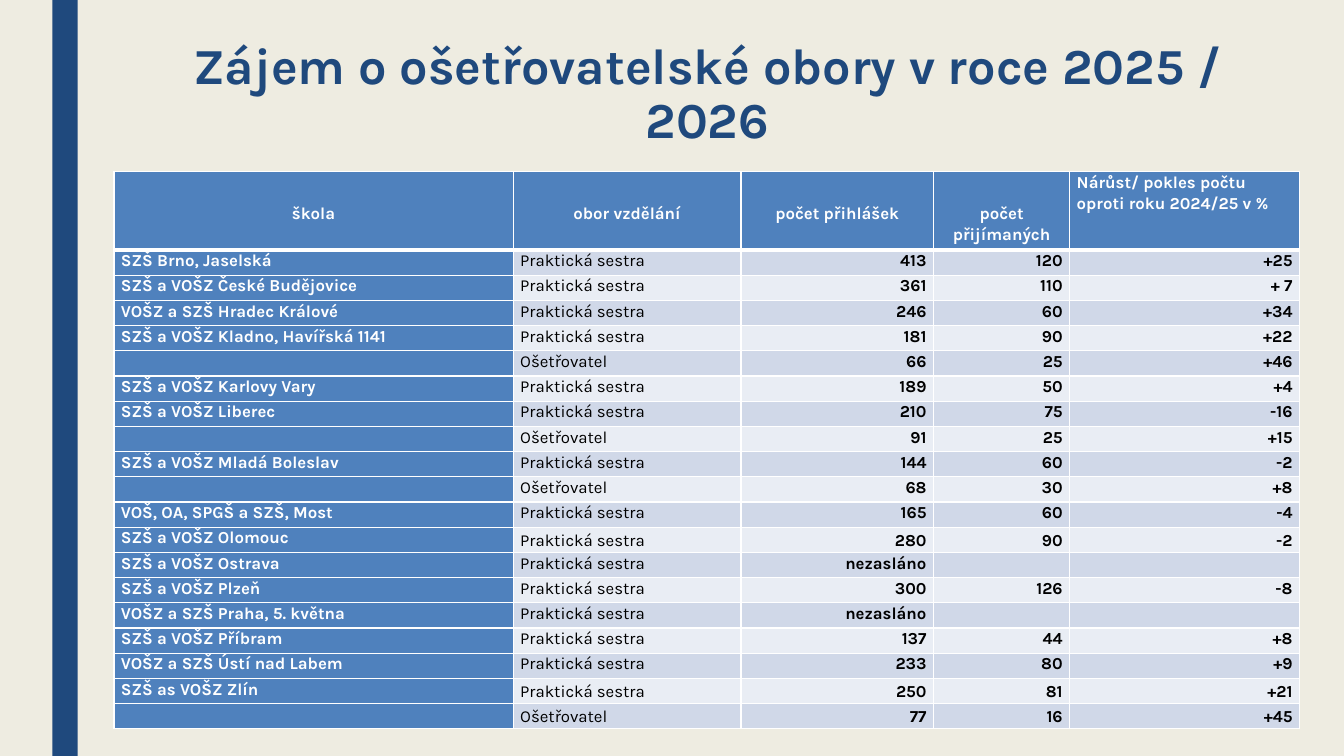
from dataclasses import dataclass

from lxml.etree import SubElement
from pptx import Presentation
from pptx.dml.color import RGBColor
from pptx.enum.shapes import MSO_SHAPE
from pptx.enum.text import MSO_ANCHOR, PP_ALIGN
from pptx.oxml import parse_xml
from pptx.oxml.ns import nsdecls, qn
from pptx.util import Inches, Pt

FONT = "Karla"
COLORS = {
    "background": "EEECE1",
    "navy": "1F497D",
    "blue": "4F81BD",
    "band_dark": "D0D8E8",
    "band_light": "E9EDF4",
    "white": "FFFFFF",
    "black": "000000",
}
COLUMN_WIDTHS = (3.96, 2.26, 1.91, 1.35, 2.28)
HEADER_HEIGHT = 0.78
ROW_HEIGHT = 0.25
HEADER_RULE = 3
NURSE = "Praktická sestra"
CARER = "Ošetřovatel"


@dataclass(frozen=True)
class Programme:
    school: str
    field: str
    applications: str
    admitted: str = ""
    change: str = ""
    anchor: MSO_ANCHOR = MSO_ANCHOR.TOP


@dataclass(frozen=True)
class CellStyle:
    fill: str
    color: str
    bold: bool = True
    align: PP_ALIGN = PP_ALIGN.LEFT
    anchor: MSO_ANCHOR = MSO_ANCHOR.TOP
    top_margin: float = 0
    top_rule: int = 1
    bottom_rule: int = 1


HEADINGS = (
    "škola",
    "obor vzdělání",
    "počet přihlášek",
    "počet přijímaných",
    "Nárůst/ pokles počtu oproti roku 2024/25 v %",
)
PROGRAMMES = (
    Programme("SZŠ Brno, Jaselská", NURSE, "413", "120", "+25"),
    Programme("SZŠ a VOŠZ České Budějovice", NURSE, "361", "110", "+ 7"),
    Programme("VOŠZ a SZŠ Hradec Králové", NURSE, "246", "60", "+34"),
    Programme("SZŠ a VOŠZ Kladno, Havířská 1141", NURSE, "181", "90", "+22"),
    Programme("", CARER, "66", "25", "+46"),
    Programme("SZŠ a VOŠZ Karlovy Vary", NURSE, "189", "50", "+4"),
    Programme("SZŠ a VOŠZ Liberec", NURSE, "210", "75", "-16"),
    Programme("", CARER, "91", "25", "+15"),
    Programme("SZŠ a VOŠZ Mladá Boleslav", NURSE, "144", "60", "-2"),
    Programme("", CARER, "68", "30", "+8"),
    Programme("VOŠ, OA, SPGŠ a SZŠ, Most", NURSE, "165", "60", "-4"),
    Programme("SZŠ a VOŠZ Olomouc", NURSE, "280", "90", "-2", MSO_ANCHOR.MIDDLE),
    Programme("SZŠ a VOŠZ Ostrava", NURSE, "nezasláno"),
    Programme("SZŠ a VOŠZ Plzeň", NURSE, "300", "126", "-8"),
    Programme("VOŠZ a SZŠ Praha, 5. května", NURSE, "nezasláno"),
    Programme("SZŠ a VOŠZ Příbram", NURSE, "137", "44", "+8"),
    Programme("VOŠZ a SZŠ Ústí nad Labem", NURSE, "233", "80", "+9"),
    Programme("SZŠ as VOŠZ Zlín", NURSE, "250", "81", "+21", MSO_ANCHOR.MIDDLE),
    Programme("", CARER, "77", "16", "+45", MSO_ANCHOR.MIDDLE),
)


def rgb(name: str) -> RGBColor:
    return RGBColor.from_string(COLORS[name])


def style_paragraph(para, size: float, color: str, bold: bool, align: PP_ALIGN, spacing: float) -> None:
    para.alignment = align
    para.line_spacing = spacing
    para.font.name = FONT
    para.font.size = Pt(size)
    para.font.bold = bold
    para.font.color.rgb = rgb(color)


def set_borders(cell, style: CellStyle) -> None:
    properties = cell._tc.get_or_add_tcPr()
    rules = (("lnL", 1), ("lnR", 1), ("lnT", style.top_rule), ("lnB", style.bottom_rule))
    for position, (tag, width) in enumerate(rules):
        border = parse_xml(
            f'<a:{tag} {nsdecls("a")} w="{Pt(width)}"><a:solidFill>'
            f'<a:srgbClr val="{COLORS["white"]}"/></a:solidFill></a:{tag}>'
        )
        properties.insert(position, border)


def fill_cell(cell, text: str, style: CellStyle) -> None:
    cell.margin_left = cell.margin_right = Inches(0.07)
    cell.margin_top = Inches(style.top_margin)
    cell.margin_bottom = 0
    cell.vertical_anchor = style.anchor
    cell.fill.solid()
    cell.fill.fore_color.rgb = rgb(style.fill)
    set_borders(cell, style)
    para = cell.text_frame.paragraphs[0]
    style_paragraph(para, 12, style.color, style.bold, style.align, 1.07)
    if text:
        para.add_run().text = text
    else:
        SubElement(para._p, qn("a:endParaRPr"), sz="1200")


def add_title(page) -> None:
    box = page.shapes.add_textbox(Inches(1.26), Inches(0.36), Inches(11.51), Inches(0.93))
    box.text_frame.word_wrap = True
    para = box.text_frame.paragraphs[0]
    para.add_run().text = "Zájem o ošetřovatelské obory v roce 2025 / 2026"
    style_paragraph(para, 36, "navy", True, PP_ALIGN.CENTER, 0.89)


def add_stripe(page, height: int) -> None:
    stripe = page.shapes.add_shape(MSO_SHAPE.RECTANGLE, Inches(0.52), 0, Inches(0.25), height)
    stripe.shadow.inherit = False
    stripe.fill.solid()
    stripe.fill.fore_color.rgb = rgb("navy")
    stripe.line.fill.background()


def add_programme_table(page) -> None:
    height = HEADER_HEIGHT + ROW_HEIGHT * len(PROGRAMMES)
    table = page.shapes.add_table(
        len(PROGRAMMES) + 1, len(HEADINGS),
        Inches(1.13), Inches(1.7), Inches(sum(COLUMN_WIDTHS)), Inches(height),
    ).table
    for column, width in zip(table.columns, COLUMN_WIDTHS):
        column.width = Inches(width)
    for row in table.rows:
        row.height = Inches(ROW_HEIGHT)
    table.rows[0].height = Inches(HEADER_HEIGHT)

    for column, heading in enumerate(HEADINGS):
        last = column == len(HEADINGS) - 1
        fill_cell(table.cell(0, column), heading, CellStyle(
            "blue", "white",
            align=PP_ALIGN.LEFT if last else PP_ALIGN.CENTER,
            top_margin=0 if last else 0.31,
            bottom_rule=HEADER_RULE,
        ))

    for row, item in enumerate(PROGRAMMES, start=1):
        band = "band_dark" if row % 2 else "band_light"
        rule = HEADER_RULE if row == 1 else 1
        number = CellStyle(band, "black", align=PP_ALIGN.RIGHT, anchor=item.anchor, top_rule=rule)
        entries = (
            (item.school, CellStyle("blue", "white", top_rule=rule)),
            (item.field, CellStyle(band, "black", bold=False, anchor=item.anchor, top_rule=rule)),
            (item.applications, number),
            (item.admitted, number),
            (item.change, number),
        )
        for column, (text, style) in enumerate(entries):
            fill_cell(table.cell(row, column), text, style)


def main() -> None:
    deck = Presentation()
    deck.slide_width = Inches(13.33)
    deck.slide_height = Inches(7.5)
    page = deck.slides.add_slide(deck.slide_layouts[6])
    page.background.fill.solid()
    page.background.fill.fore_color.rgb = rgb("background")
    add_stripe(page, deck.slide_height)
    add_title(page)
    add_programme_table(page)
    deck.save("out.pptx")


if __name__ == "__main__":
    main()
